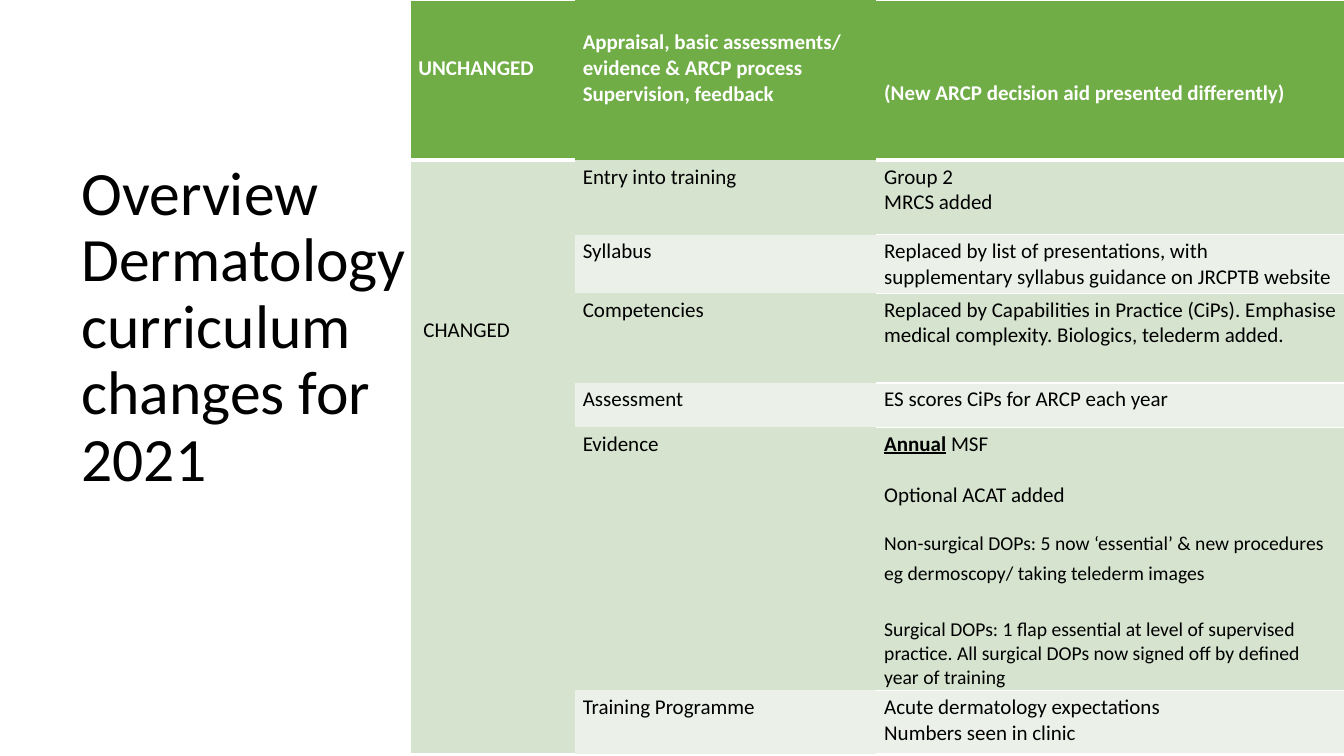
import pptx
import pptx.dml.color
import pptx.enum.text
import pptx.oxml
import pptx.oxml.ns
import pptx.util
from collections import namedtuple

Inches = pptx.util.Inches
Pt = pptx.util.Pt
RGBColor = pptx.dml.color.RGBColor

WHITE = RGBColor(0xFF, 0xFF, 0xFF)
BLACK = RGBColor(0, 0, 0)
GREEN = RGBColor(0x70, 0xAD, 0x47)
PALE_GREEN = RGBColor(0xD5, 0xE3, 0xCF)
FAINT_GREEN = RGBColor(0xEB, 0xF1, 0xE9)

FONT = "Calibri"
BODY_SIZE = 15
LINE_RATIO = 1.22
COLUMNS = [1.63, 2.99, 4.65]
ROWS = [1.59, 0.74, 0.53, 0.89, 0.44, 2.23, 0.63]

Para = namedtuple("Para", "spans gap", defaults=[0])
Span = namedtuple("Span", "text formats", defaults=[{}])
SMALL = {"size": Pt(14)}

HEADER = [
    (2, ["UNCHANGED"]),
    (1, ["Appraisal, basic assessments/ evidence & ARCP process", "Supervision, feedback"]),
    (3, ["(New ARCP decision aid presented differently)"]),
]
EVIDENCE = [
    Para([Span("Annual", {"bold": True, "underline": True}), Span(" MSF")]),
    Para([Span("Optional ACAT added")], 15),
    Para([Span("Non-surgical DOPs: 5 now ‘essential’ & new procedures "
               "eg dermoscopy/ taking telederm images", SMALL),
          Span(" ", {"size": Pt(18)})], 14),
    Para([Span("Surgical DOPs: 1 flap essential at level of supervised practice. "
               "All surgical DOPs now signed off by defined year of training", SMALL)], 18),
]
CHANGES = [
    ("Entry into training", ["Group 2", "MRCS added"]),
    ("Syllabus", ["Replaced by list of presentations, with supplementary "
                  "syllabus guidance on JRCPTB website"]),
    ("Competencies", ["Replaced by Capabilities in Practice (CiPs). Emphasise "
                      "medical complexity. Biologics, telederm added."]),
    ("Assessment", ["ES scores CiPs for ARCP each year"]),
    ("Evidence", EVIDENCE),
    ("Training Programme", ["Acute dermatology expectations", "Numbers seen in clinic"]),
]


def write_paras(frame, paras, formats):
    for index, item in enumerate(paras):
        content = Para([Span(item)]) if isinstance(item, str) else item
        para = frame.paragraphs[0] if index == 0 else frame.add_paragraph()
        para.space_before = Pt(round(content.gap * LINE_RATIO, 1))
        for span in content.spans:
            run = para.add_run()
            run.text = span.text
            values = {**formats, **span.formats}
            run.font.color.rgb = values.pop("color")
            for name, value in values.items():
                setattr(run.font, name, value)


def draw_borders(cell, widths):
    properties = cell._tc.get_or_add_tcPr()
    for side in "LRTB":
        width = widths.get(side, 0)
        line = pptx.oxml.parse_xml(
            f'<a:ln{side} {pptx.oxml.ns.nsdecls("a")} w="{Pt(width)}">'
            + (f'<a:solidFill><a:srgbClr val="{WHITE}"/></a:solidFill>' if width else "<a:noFill/>")
            + f"</a:ln{side}>")
        properties.append(line)


def fill_cell(cell, paras, color, borders, blank_lines=0, indent=0, header=False):
    draw_borders(cell, borders)
    cell.fill.solid()
    cell.fill.fore_color.rgb = color
    margins = {
        "margin_left": 0.08 + indent,
        "margin_right": 0.07,
        "margin_top": 0.04 + blank_lines * BODY_SIZE * LINE_RATIO / 72,
        "margin_bottom": 0.04,
    }
    for name, value in margins.items():
        setattr(cell, name, Inches(value))
    write_paras(cell.text_frame, paras, {
        "name": FONT, "size": Pt(BODY_SIZE), "bold": header,
        "color": WHITE if header else BLACK})


def add_title(page, left, top, width, height):
    frame = page.shapes.add_textbox(*map(Inches, (left, top, width, height))).text_frame
    frame.word_wrap = True
    frame.vertical_anchor = pptx.enum.text.MSO_ANCHOR.MIDDLE
    write_paras(frame, ["Overview Dermatology curriculum changes for 2021"],
                {"name": FONT, "size": Pt(44), "color": BLACK})
    frame.paragraphs[0].line_spacing = 0.9


def add_changes_table(page, left, top):
    box = map(Inches, (left, top, sum(COLUMNS), sum(ROWS)))
    table = page.shapes.add_table(len(ROWS), len(COLUMNS), *box).table
    table.first_row = table.horz_banding = False
    for column, width in zip(table.columns, COLUMNS):
        column.width = Inches(width)
    for row, height in zip(table.rows, ROWS):
        row.height = Inches(height)

    header_borders = [{"L": 1, "T": 1, "B": 3}, {}, {"R": 1, "T": 1, "B": 3}]
    for index, (blank_lines, paras) in enumerate(HEADER):
        fill_cell(table.cell(0, index), paras, GREEN, header_borders[index],
                  blank_lines, header=True)

    table.cell(1, 0).merge(table.cell(len(CHANGES), 0))
    fill_cell(table.cell(1, 0), ["CHANGED"], PALE_GREEN, {"L": 1, "T": 1, "B": 1},
              blank_lines=6, indent=0.05)
    for index, (topic, details) in enumerate(CHANGES, start=1):
        color = PALE_GREEN if index % 2 else FAINT_GREEN
        fill_cell(table.cell(index, 1), [topic], color, {})
        fill_cell(table.cell(index, 2), details, color, {"R": 1, "T": 1, "B": 1})


def main():
    deck = pptx.Presentation()
    deck.slide_width, deck.slide_height = Inches(13.33), Inches(7.5)
    page = deck.slides.add_slide(deck.slide_layouts[6])
    add_title(page, 0.71, 0.69, 3.83, 5.13)
    add_changes_table(page, 4.07, 0)
    deck.save("out.pptx")


if __name__ == "__main__":
    main()
